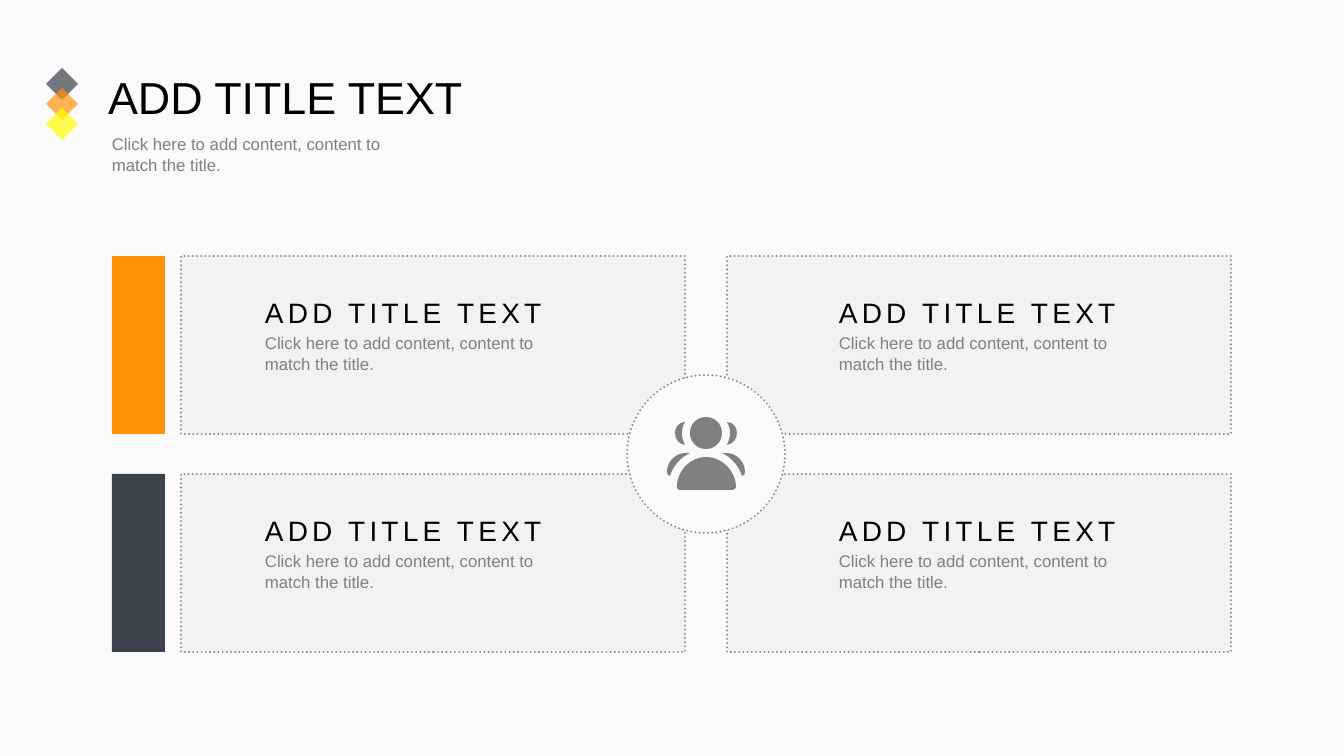
from lxml import etree
from pptx import Presentation
from pptx.dml.color import RGBColor
from pptx.enum.dml import MSO_LINE
from pptx.enum.shapes import MSO_SHAPE
from pptx.enum.text import MSO_ANCHOR, MSO_AUTO_SIZE, PP_ALIGN
from pptx.oxml.ns import qn
from pptx.util import Emu, Pt

RECTANGLE, OVAL, DIAMOND = MSO_SHAPE.RECTANGLE, MSO_SHAPE.OVAL, MSO_SHAPE.DIAMOND
DOTTED, TOP, LEFT = MSO_LINE.ROUND_DOT, MSO_ANCHOR.TOP, PP_ALIGN.LEFT
GROW, FIXED = MSO_AUTO_SIZE.SHAPE_TO_FIT_TEXT, MSO_AUTO_SIZE.NONE

BACKGROUND = RGBColor(0xFA, 0xFA, 0xFA)
PANEL = RGBColor(0xF2, 0xF2, 0xF2)
OUTLINE = RGBColor(0x77, 0x84, 0x95)
ORANGE = RGBColor(0xFF, 0x94, 0x09)
SLATE = RGBColor(0x3B, 0x42, 0x4B)
YELLOW = RGBColor(0xFF, 0xFF, 0x00)
GRAY = RGBColor(0x80, 0x80, 0x80)
BLACK = RGBColor(0x00, 0x00, 0x00)

EMU_PER_PX = 914400 / 100.8
HEADING = "ADD TITLE TEXT"
CONTENT = "Click here to add content, content to match the title."
ROWS = [(ORANGE, (308, 351)), (SLATE, (329, 333))]
COLUMNS = [(181, 255), (727, 829)]

ICON_AXIS = 706
HEAD = [(706, 417),
        (715, 417), (722, 424), (722, 433), (722, 442), (715, 449), (706, 449),
        (697, 449), (690, 442), (690, 433), (690, 424), (697, 417), (706, 417)]
BODY = [(706, 457),
        (722, 457), (736, 471), (736, 487), (736, 489), (734, 490), (732, 490),
        (714, 490), (698, 490), (680, 490), (678, 490), (677, 489), (677, 487),
        (677, 471), (690, 457), (706, 457)]
SIDE_HEAD = [(685, 422),
             (683, 425), (682, 429), (682, 433), (682, 437), (683, 441), (685, 445),
             (679, 444), (675, 439), (675, 433), (675, 427), (679, 422), (685, 422)]
SIDE_BODY = [(686, 453),
             (687, 453), (689, 453), (690, 453), (681, 457), (673, 466), (670, 476),
             (668, 476), (667, 474), (667, 472), (667, 461), (676, 453), (686, 453)]


def px(length):
    """Turn pixels into EMU."""
    return Emu(round(length * EMU_PER_PX))


def mirrored(curve):
    """Reflect a curve about the icon's vertical axis."""
    return [(2 * ICON_AXIS - x, y) for x, y in curve]


def write(frame, text, *, size, color, spacing=0, line_spacing=1.0, margin_top=5,
          auto_size=GROW):
    """Put formatted text into a text frame."""
    frame.word_wrap = True
    frame.auto_size = auto_size
    frame.vertical_anchor = TOP
    frame.margin_top = px(margin_top)
    paragraph = frame.paragraphs[0]
    paragraph.alignment = LEFT
    paragraph.line_spacing = line_spacing
    run = paragraph.add_run()
    run.text = text
    run.font.name = "Arial"
    run.font.size = Pt(size)
    run.font.color.rgb = color
    if spacing:
        run.font._element.set("spc", str(spacing * 100))


class Canvas:
    """Draw styled elements on one slide."""

    def __init__(self, slide):
        self.shapes = slide.shapes
        slide.background.fill.solid()
        slide.background.fill.fore_color.rgb = BACKGROUND

    def paint(self, shape, color, opacity=100, dotted=False):
        shape.shadow.inherit = False
        shape.fill.solid()
        shape.fill.fore_color.rgb = color
        if opacity < 100:
            fill_color = shape._element.spPr.find(".//" + qn("a:srgbClr"))
            etree.SubElement(fill_color, qn("a:alpha")).set("val", str(opacity * 1000))
        if dotted:
            shape.line.color.rgb = OUTLINE
            shape.line.width = Pt(1.5)
            shape.line.dash_style = DOTTED
            shape._element.spPr.find(qn("a:ln")).set("cap", "rnd")
        else:
            shape.line.fill.background()

    def shape(self, kind, left, top, width, height, color, **style):
        shape = self.shapes.add_shape(kind, px(left), px(top), px(width), px(height))
        self.paint(shape, color, **style)

    def outline(self, curves, color):
        contours = [[(px(x), px(y)) for x, y in curve] for curve in curves]
        builder = self.shapes.build_freeform(*contours[0][0], scale=1.0)
        for index, points in enumerate(contours):
            if index:
                builder.move_to(*points[0])
            builder.add_line_segments(points[3::3], close=True)
        shape = builder.convert_to_shape()
        segments = [points[start:start + 3] for points in contours
                    for start in range(1, len(points), 3)]
        lines = list(shape._element.spPr.iter(qn("a:lnTo")))
        for line, segment in zip(lines, segments):
            curve = etree.Element(qn("a:cubicBezTo"))
            for x, y in segment:
                point = etree.SubElement(curve, qn("a:pt"))
                point.set("x", str(x - shape.left))
                point.set("y", str(y - shape.top))
            line.getparent().replace(line, curve)
        self.paint(shape, color)

    def text(self, text, left, top, width, height, **style):
        box = self.shapes.add_textbox(px(left), px(top), px(width), px(height))
        write(box.text_frame, text, **style)

    def content(self, left, top, width):
        self.text(CONTENT, left, top, width, 50, size=12, color=GRAY,
                  line_spacing=1.07, margin_top=3)

    def title(self, text, left, top, width, height):
        title = self.shapes.title
        title.left, title.top = px(left), px(top)
        title.width, title.height = px(width), px(height)
        write(title.text_frame, text, size=32, color=BLACK, margin_top=4,
              auto_size=FIXED)


def main():
    """Build and save the slide."""
    presentation = Presentation()
    presentation.slide_width, presentation.slide_height = px(1344), px(756)
    canvas = Canvas(presentation.slides.add_slide(presentation.slide_layouts[5]))

    canvas.title(HEADING, 98, 66, 376, 65)
    canvas.content(102, 129, 319)
    for index, color in enumerate((SLATE, ORANGE, YELLOW)):
        canvas.shape(DIAMOND, 46, 68 + 20 * index, 32, 32, color, opacity=70)

    for row, (bar_color, heading_widths) in enumerate(ROWS):
        top = 256 + 218 * row
        canvas.shape(RECTANGLE, 112, top, 53, 178, bar_color)
        for (card_left, text_left), heading_width in zip(COLUMNS, heading_widths):
            canvas.shape(RECTANGLE, card_left, top, 504, 178, PANEL, dotted=True)
            canvas.text(HEADING, text_left, top + 34, heading_width, 44,
                        size=20, color=BLACK, spacing=3)
            canvas.content(text_left, top + 72, 308)

    canvas.shape(OVAL, 627, 375, 158, 158, BACKGROUND, dotted=True)
    sides = [SIDE_HEAD, SIDE_BODY]
    canvas.outline([HEAD, BODY, *sides, *map(mirrored, sides)], GRAY)

    presentation.save("out.pptx")


if __name__ == "__main__":
    main()
